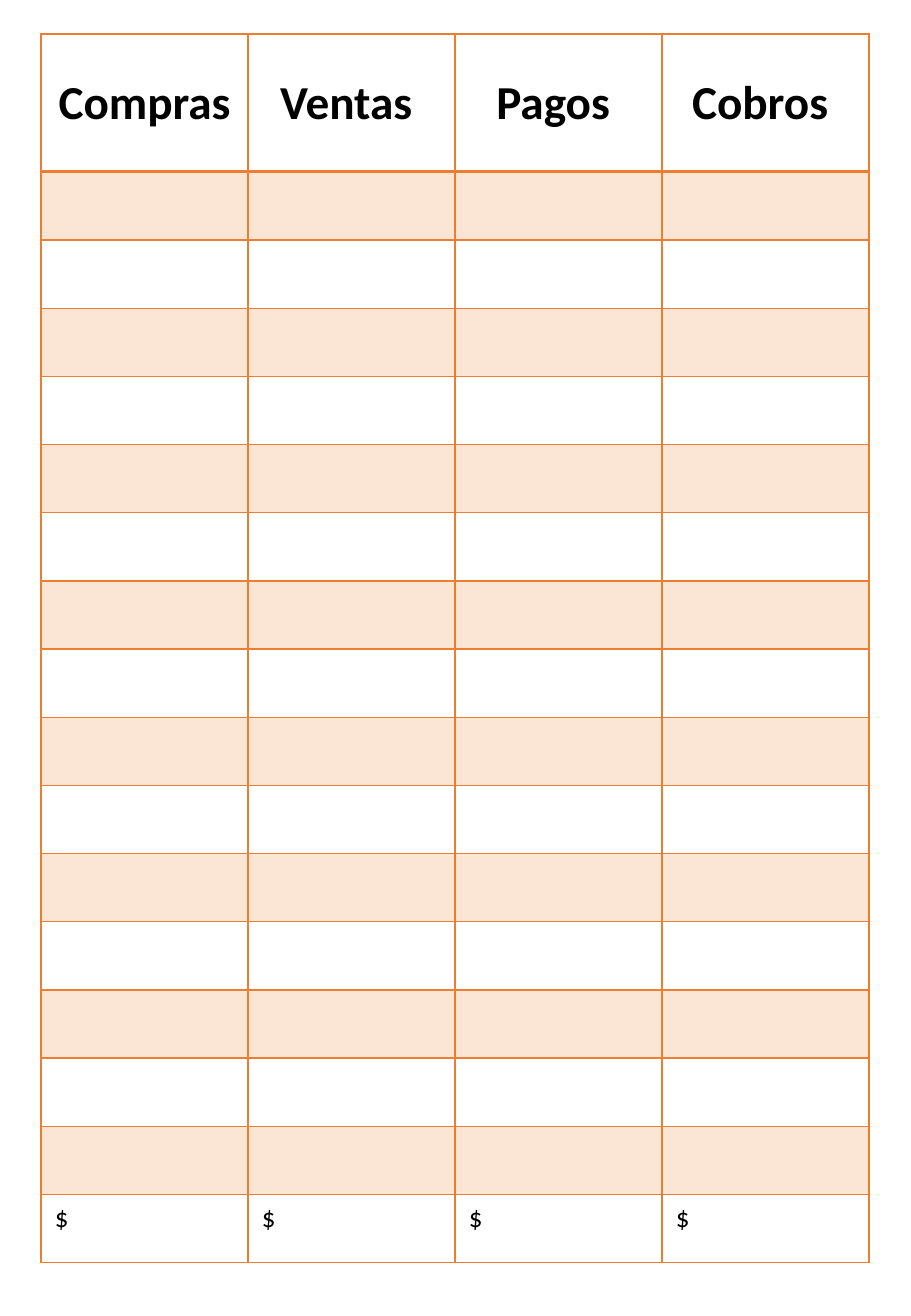
import lxml.etree
import pptx
import pptx.dml.color
import pptx.enum.text
import pptx.oxml.ns
import pptx.util

EMU_PER_PX = 7526
COLORS = {"orange": "ED7D31", "text": "000000"}
HEADINGS = ["Compras ", "Ventas ", "Pagos ", "Cobros "]
ENTRY_ROWS = 15
TOTAL_ROW = ENTRY_ROWS + 1


def px(length):
    return pptx.util.Emu(length * EMU_PER_PX)


def rgb(name):
    return pptx.dml.color.RGBColor.from_string(COLORS[name])


def add_element(parent, tag, **attributes):
    return lxml.etree.SubElement(parent, pptx.oxml.ns.qn(tag), **attributes)


class LedgerPage:
    font = "Calibri"

    def __init__(self, deck):
        self.page = deck.slides.add_slide(deck.slide_layouts[6])

    def table(self, left, top, width, header_height, body_height):
        rows, columns = TOTAL_ROW + 1, len(HEADINGS)
        frame = self.page.shapes.add_table(
            rows, columns, px(left), px(top), px(width), px(header_height + body_height))
        table = frame.table
        table.first_row = table.horz_banding = False
        for column in table.columns:
            column.width = px(width) // columns
        for index, row in enumerate(table.rows):
            row.height = px(header_height) if index == 0 else px(body_height) // TOTAL_ROW
        return table

    def text(self, cell, words, size, bold=False, centered=False):
        cell.margin_left = cell.margin_right = px(14)
        cell.margin_top = cell.margin_bottom = px(7)
        para = cell.text_frame.paragraphs[0]
        para.text = words
        para.font.name = self.font
        para.font.size = pptx.util.Pt(size)
        para.font.bold = bold
        para.font.color.rgb = rgb("text")
        if centered:
            para.alignment = pptx.enum.text.PP_ALIGN.CENTER
            cell.vertical_anchor = pptx.enum.text.MSO_ANCHOR.MIDDLE

    def fill(self, cell, tinted):
        if not tinted:
            cell.fill.background()
            return
        cell.fill.solid()
        cell.fill.fore_color.rgb = rgb("orange")
        color = cell._tc.tcPr.find(".//" + pptx.oxml.ns.qn("a:srgbClr"))
        add_element(color, "a:alpha", val="20000")

    def borders(self, cell, top=1, bottom=1):
        """Put the four border lines ahead of the cell's fill, as the schema asks."""
        properties = cell._tc.get_or_add_tcPr()
        sides = {"L": 1, "R": 1, "T": top, "B": bottom}
        for place, (side, points) in enumerate(sides.items()):
            line = add_element(properties, f"a:ln{side}", w=str(pptx.util.Pt(points)))
            solid = add_element(line, "a:solidFill")
            add_element(solid, "a:srgbClr", val=COLORS["orange"])
            properties.insert(place, line)


def main():
    deck = pptx.Presentation()
    deck.slide_width, deck.slide_height = px(911), px(1316)
    ledger = LedgerPage(deck)
    table = ledger.table(41, 34, 828, header_height=138, body_height=1091)
    for column, heading in enumerate(HEADINGS):
        ledger.text(table.cell(0, column), heading, 28, bold=True, centered=True)
        ledger.text(table.cell(TOTAL_ROW, column), "$", 16)
        for row in range(TOTAL_ROW + 1):
            cell = table.cell(row, column)
            ledger.fill(cell, tinted=row % 2 == 1)
            ledger.borders(cell, top=2 if row == 1 else 1, bottom=2 if row == 0 else 1)
    deck.save("out.pptx")


if __name__ == "__main__":
    main()
